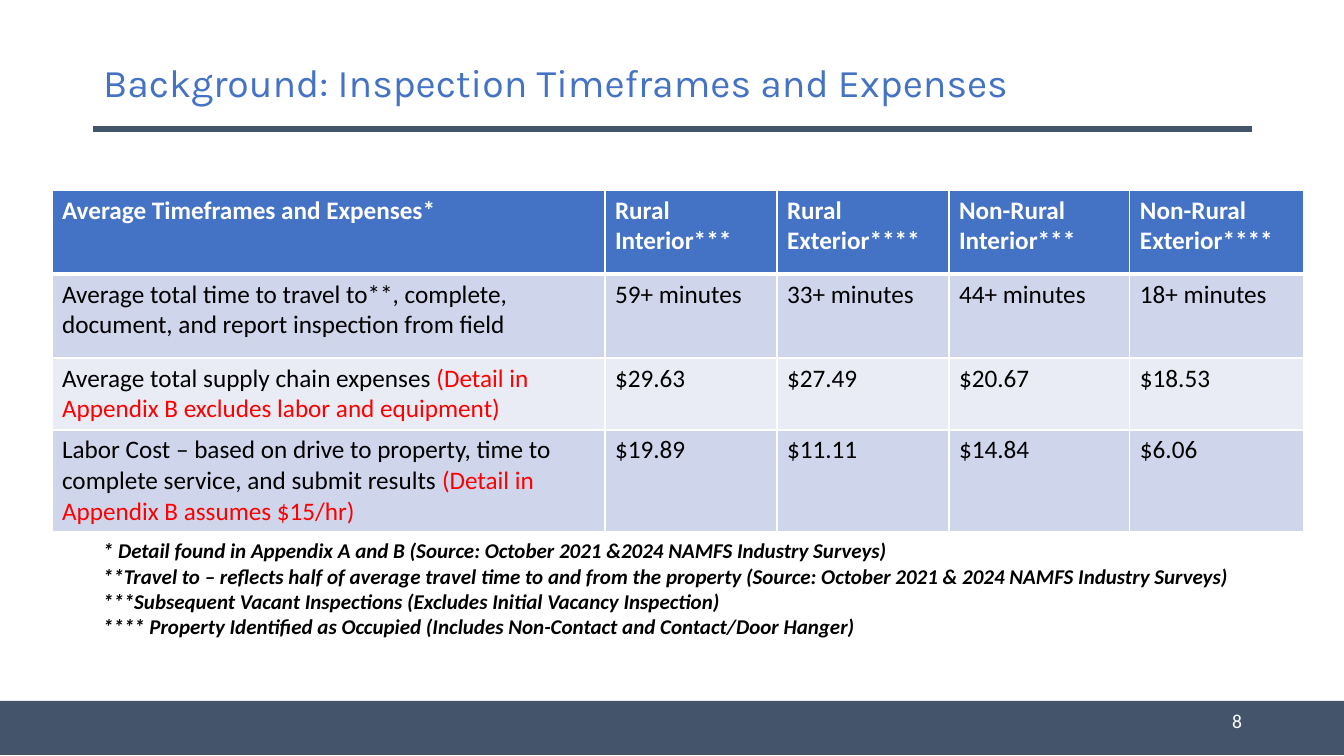
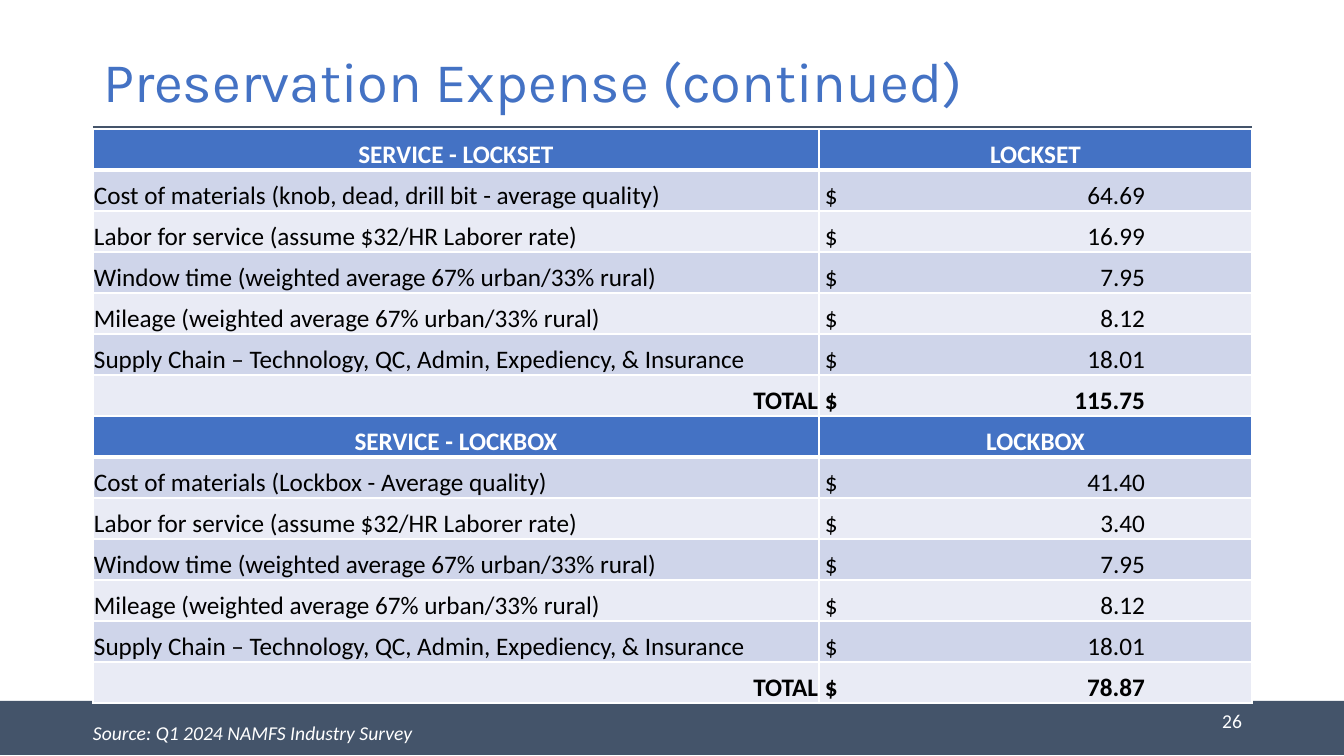
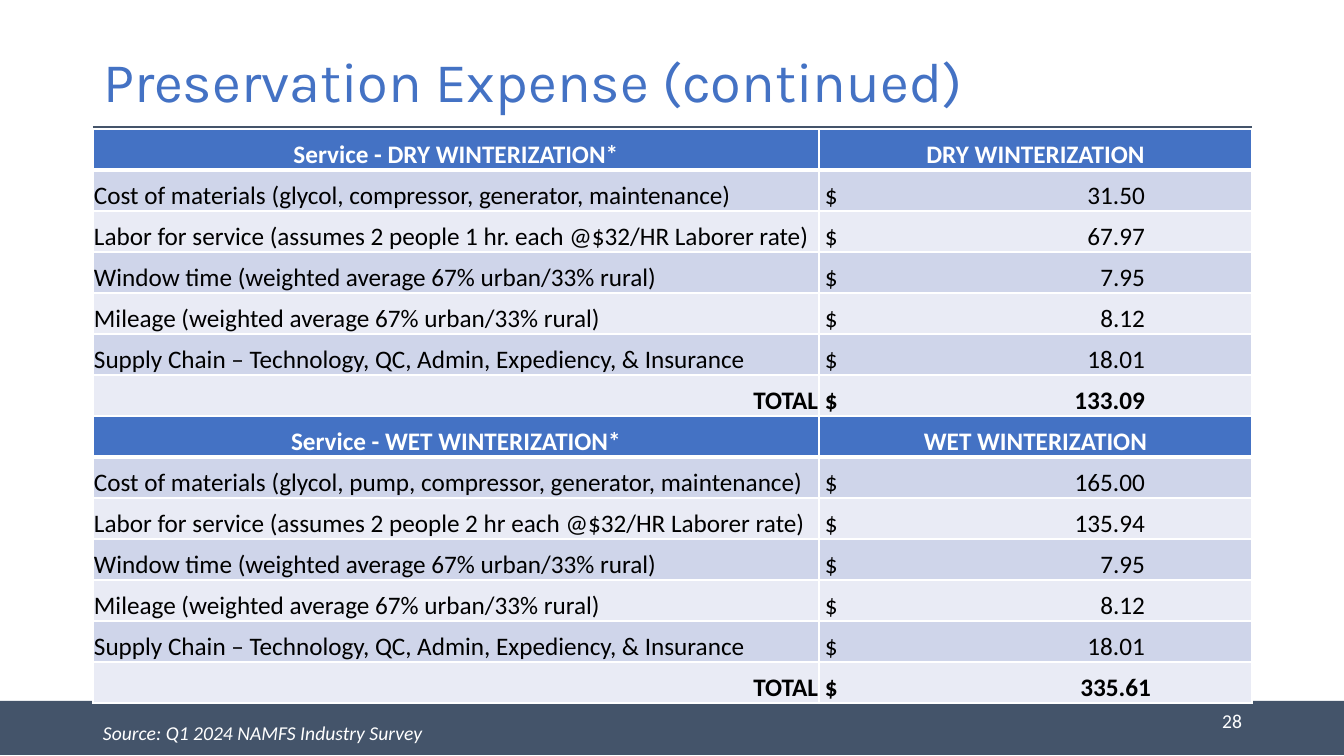
from lxml import etree
from pptx import Presentation
from pptx.dml.color import RGBColor
from pptx.enum.shapes import MSO_CONNECTOR, MSO_SHAPE
from pptx.enum.text import MSO_ANCHOR, MSO_AUTO_SIZE, PP_ALIGN
from pptx.oxml.ns import qn
from pptx.util import Pt

# Enum members
LEFT, CENTER, RIGHT = PP_ALIGN.LEFT, PP_ALIGN.CENTER, PP_ALIGN.RIGHT
TOP, MIDDLE, BOTTOM = MSO_ANCHOR.TOP, MSO_ANCHOR.MIDDLE, MSO_ANCHOR.BOTTOM
NO_AUTOFIT = MSO_AUTO_SIZE.NONE
RECTANGLE, STRAIGHT = MSO_SHAPE.RECTANGLE, MSO_CONNECTOR.STRAIGHT

# Colours and fonts
SLATE = RGBColor(0x44, 0x54, 0x6A)
BLUE = RGBColor(0x44, 0x72, 0xC4)
BAND_DARK = RGBColor(0xCF, 0xD5, 0xEA)
BAND_LIGHT = RGBColor(0xE9, 0xEB, 0xF5)
WHITE = RGBColor(0xFF, 0xFF, 0xFF)
BLACK = RGBColor(0x00, 0x00, 0x00)
RED = RGBColor(0xFF, 0x00, 0x00)
TITLE_FONT, BODY_FONT = "Karla", "Calibri"

# Layout in px
EMU_PER_PX = 914400 / 100.8
WIDTH, HEIGHT = 1344, 756
MARGIN, CONTENT_WIDTH = 93, 1159
RULE_Y, BAND_Y = 129, 701
COST_ROW = 41
AMOUNT_TAB = 320


def px(value):
    return round(value * EMU_PER_PX)


class Deck:
    def __init__(self):
        self.presentation = Presentation()
        self.presentation.slide_width = px(WIDTH)
        self.presentation.slide_height = px(HEIGHT)
        self.slide = None

    def new_slide(self, title, number, title_size):
        """Start a slide with the shared title, rule, band and number."""
        layout = self.presentation.slide_layouts[5]
        self.slide = self.presentation.slides.add_slide(layout)
        self.title(title, title_size)
        self.band()
        self.rule()
        self.text([number], 950, BAND_Y, 302, 40, 14, WHITE,
                  align=RIGHT, anchor=MIDDLE)

    def title(self, text, size):
        shape = self.slide.shapes.title
        shape.left, shape.top = px(MARGIN), px(40)
        shape.width, shape.height = px(CONTENT_WIDTH), px(89)
        frame = shape.text_frame
        frame.word_wrap, frame.auto_size = True, NO_AUTOFIT
        frame.vertical_anchor = MIDDLE
        self.fill_text(frame, [text], size, BLUE, font=TITLE_FONT)
        frame.paragraphs[0].line_spacing = 0.9

    def band(self):
        shape = self.slide.shapes.add_shape(
            RECTANGLE, 0, px(BAND_Y), px(WIDTH), px(54))
        shape.shadow.inherit = False
        shape.fill.solid()
        shape.fill.fore_color.rgb = SLATE
        shape.line.fill.background()

    def rule(self):
        line = self.slide.shapes.add_connector(
            STRAIGHT, px(MARGIN), px(RULE_Y),
            px(MARGIN + CONTENT_WIDTH), px(RULE_Y))
        line.line.color.rgb = SLATE
        line.line.width = Pt(4)
        etree.SubElement(line.element.spPr, qn("a:effectLst"))

    def text(self, paragraphs, left, top, width, height, size, color,
             align=LEFT, anchor=TOP, **style):
        shape = self.slide.shapes.add_textbox(
            px(left), px(top), px(width), px(height))
        frame = shape.text_frame
        frame.word_wrap = True
        frame.vertical_anchor = anchor
        self.fill_text(frame, paragraphs, size, color, align, **style)

    def fill_text(self, frame, paragraphs, size, color, align=LEFT,
                  font=BODY_FONT, bold=False, italic=False, tab=None):
        """Each paragraph is a string or a list of (text, colour) runs."""
        for index, content in enumerate(paragraphs):
            paragraph = (frame.add_paragraph() if index
                         else frame.paragraphs[0])
            paragraph.alignment = align
            if tab:
                stops = etree.SubElement(
                    paragraph._p.get_or_add_pPr(), qn("a:tabLst"))
                etree.SubElement(stops, qn("a:tab"),
                                 pos=str(px(tab)), algn="r")
            runs = [(content, color)] if isinstance(content, str) else content
            for run_text, run_color in runs:
                run = paragraph.add_run()
                run.text = run_text
                run.font.name, run.font.size = font, Pt(size)
                run.font.bold, run.font.italic = bold, italic
                run.font.color.rgb = run_color

    def table(self, left, top, columns, rows):
        """Add an empty table with a header row and banded body rows."""
        table = self.slide.shapes.add_table(
            len(rows), len(columns), px(left), px(top),
            px(sum(columns)), px(sum(rows))).table
        table.horz_banding = False
        for column, width in zip(table.columns, columns):
            column.width = px(width)
        for index, (row, height) in enumerate(zip(table.rows, rows)):
            row.height = px(height)
            fill = BAND_DARK if index % 2 else BAND_LIGHT
            for cell in row.cells:
                self.borders(cell, top=3 if index == 1 else 1,
                             bottom=3 if index == 0 else 1)
                cell.fill.solid()
                cell.fill.fore_color.rgb = fill if index else BLUE
        return table

    def borders(self, cell, top, bottom):
        properties = cell._tc.get_or_add_tcPr()
        for side, width in zip("LRTB", (1, 1, top, bottom)):
            line = etree.SubElement(properties, qn(f"a:ln{side}"),
                                    w=str(int(Pt(width))))
            fill = etree.SubElement(line, qn("a:solidFill"))
            etree.SubElement(fill, qn("a:srgbClr"), val=str(WHITE))

    def timeframe_table(self, left, top, columns, rows, contents):
        table = self.table(left, top, columns, rows)
        for row_index, row in enumerate(contents):
            header = row_index == 0
            for column_index, paragraphs in enumerate(row):
                self.fill_text(table.cell(row_index, column_index).text_frame,
                               paragraphs, 18, WHITE if header else BLACK,
                               bold=header)

    def cost_table(self, top, header, costs, total, total_tab=AMOUNT_TAB):
        rows = [header, *costs, ("TOTAL", total)]
        last = len(rows) - 1
        table = self.table(MARGIN, top, (726, 433), [COST_ROW] * len(rows))
        for index, (label, amount) in enumerate(rows):
            label_cell, amount_cell = table.rows[index].cells
            for cell in (label_cell, amount_cell):
                cell.vertical_anchor = BOTTOM
                cell.margin_left = cell.margin_right = px(1)
                cell.margin_top, cell.margin_bottom = px(1), 0
            if index == 0:
                for cell, text in ((label_cell, label), (amount_cell, amount)):
                    self.fill_text(cell.text_frame, [text], 18, WHITE, CENTER,
                                   bold=True)
                continue
            is_total = index == last
            amount_cell.margin_left = px(6)
            self.fill_text(label_cell.text_frame, [label], 18, BLACK,
                           RIGHT if is_total else LEFT, bold=is_total)
            self.fill_text(amount_cell.text_frame, [f"$\t{amount}"], 18, BLACK,
                           bold=is_total,
                           tab=total_tab if is_total else AMOUNT_TAB)

    def source(self, left):
        self.text(["Source: Q1 2024 NAMFS Industry Survey"],
                  left, 716, 665, 34, 14, WHITE, italic=True)


# Contents
TIMEFRAMES = [
    [["Average Timeframes and Expenses*"],
     ["Rural", "Interior***"], ["Rural", "Exterior****"],
     ["Non-Rural", "Interior***"], ["Non-Rural", "Exterior****"]],
    [["Average total time to travel to**, complete, document, "
      "and report inspection from field"],
     ["59+ minutes"], ["33+ minutes"], ["44+ minutes"], ["18+ minutes"]],
    [[[("Average total supply chain expenses ", BLACK),
       ("(Detail in Appendix B excludes labor and equipment)", RED)]],
     ["$29.63"], ["$27.49"], ["$20.67"], ["$18.53"]],
    [[[("Labor Cost – based on drive to property, time to complete service, "
        "and submit results ", BLACK),
       ("(Detail in Appendix B assumes $15/hr)", RED)]],
     ["$19.89"], ["$11.11"], ["$14.84"], ["$6.06"]],
]

FOOTNOTES = [
    "* Detail found in Appendix A and B "
    "(Source: October 2021 &2024 NAMFS Industry Surveys)",
    "**Travel to – reflects half of average travel time to and from the "
    "property (Source: October 2021 & 2024 NAMFS Industry Surveys)",
    "***Subsequent Vacant Inspections (Excludes Initial Vacancy Inspection)",
    "**** Property Identified as Occupied "
    "(Includes Non-Contact and Contact/Door Hanger)",
]

LOCK_LABOR = "Labor for service (assume $32/HR Laborer rate)"
SHARED_COSTS = [
    ("Window time (weighted average 67% urban/33% rural)", "7.95"),
    ("Mileage (weighted average 67% urban/33% rural)", "8.12"),
    ("Supply Chain – Technology, QC, Admin, Expediency, & Insurance", "18.01"),
]
PRESERVATION_TITLE = "Preservation Expense (continued)"
SECOND_TABLE_Y = RULE_Y + 7 * COST_ROW


def main():
    deck = Deck()

    # Inspection timeframes
    deck.new_slide("Background: Inspection Timeframes and Expenses", "8", 28)
    deck.timeframe_table(52, 190, (553, 172, 172, 181, 174),
                         (84, 84, 72, 102), TIMEFRAMES)
    deck.text(FOOTNOTES, MARGIN, 533, 1221, 112, 15, BLACK,
              bold=True, italic=True)

    # Lockset and lockbox
    deck.new_slide(PRESERVATION_TITLE, "26", 40)
    deck.cost_table(
        RULE_Y, ("SERVICE - LOCKSET", "LOCKSET"),
        [("Cost of materials (knob, dead, drill bit - average quality)",
          "64.69"),
         (LOCK_LABOR, "16.99"), *SHARED_COSTS], "115.75")
    deck.cost_table(
        SECOND_TABLE_Y, ("SERVICE - LOCKBOX", "LOCKBOX"),
        [("Cost of materials (Lockbox - Average quality)", "41.40"),
         (LOCK_LABOR, "3.40"), *SHARED_COSTS], "78.87")
    deck.source(83)

    # Dry and wet winterization
    deck.new_slide(PRESERVATION_TITLE, "28", 40)
    deck.cost_table(
        RULE_Y, ("Service - DRY WINTERIZATION*", "DRY WINTERIZATION"),
        [("Cost of materials (glycol, compressor, generator, maintenance)",
          "31.50"),
         ("Labor for service (assumes 2 people 1 hr. each "
          "@$32/HR Laborer rate)", "67.97"), *SHARED_COSTS], "133.09")
    deck.cost_table(
        SECOND_TABLE_Y, ("Service - WET WINTERIZATION*", "WET WINTERIZATION"),
        [("Cost of materials (glycol, pump, compressor, generator, "
          "maintenance)", "165.00"),
         ("Labor for service (assumes 2 people 2 hr each "
          "@$32/HR Laborer rate)", "135.94"), *SHARED_COSTS], "335.61",
        total_tab=AMOUNT_TAB + 6)
    deck.source(MARGIN)

    deck.presentation.save("out.pptx")


if __name__ == "__main__":
    main()
